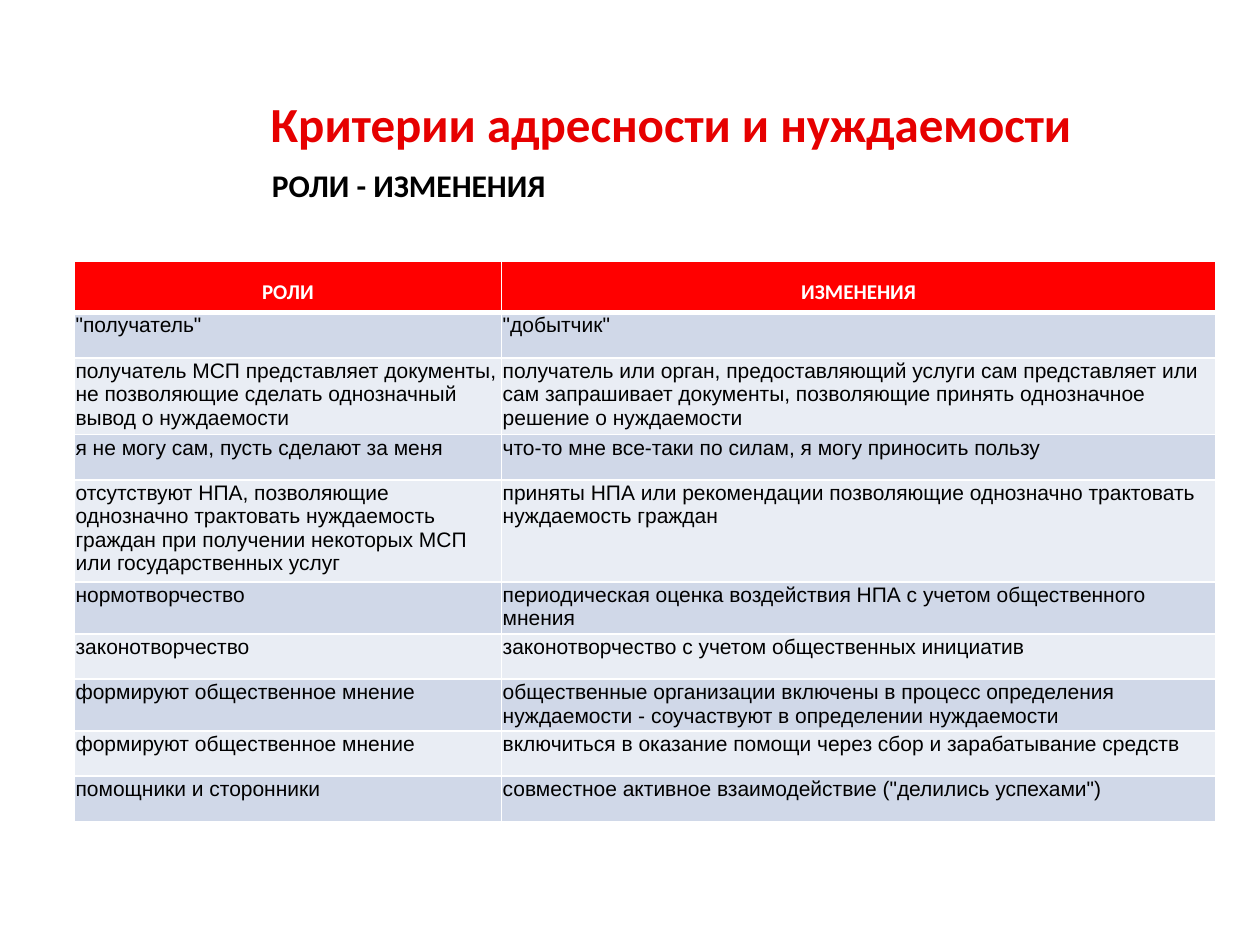
from lxml.etree import SubElement
from pptx import Presentation
from pptx.dml.color import RGBColor as RGB
from pptx.enum.text import MSO_ANCHOR as Anchor, PP_ALIGN as Align
from pptx.oxml.ns import qn
from pptx.util import Inches, Pt

# Content
TITLE = "Критерии адресности и нуждаемости"
SUBTITLE = "РОЛИ - ИЗМЕНЕНИЯ"
HEADER = ("РОЛИ", "ИЗМЕНЕНИЯ")
# Each entry: text lines the row needs, role, change
CHANGES = [
    (1, '"получатель"', '"добытчик"'),
    (3, "получатель МСП представляет документы, не позволяющие сделать однозначный вывод о нуждаемости",
     "получатель или орган, предоставляющий услуги сам представляет или сам запрашивает документы, "
     "позволяющие принять однозначное решение о нуждаемости"),
    (1, "я не могу сам, пусть сделают за меня", "что-то мне все-таки по силам, я могу приносить пользу"),
    (4, "отсутствуют НПА, позволяющие однозначно трактовать нуждаемость граждан при получении "
     "некоторых МСП или государственных услуг",
     "приняты НПА или рекомендации позволяющие однозначно трактовать нуждаемость граждан"),
    (2, "нормотворчество", "периодическая оценка воздействия НПА с учетом общественного мнения"),
    (1, "законотворчество", "законотворчество с учетом общественных инициатив"),
    (2, "формируют общественное мнение",
     "общественные организации включены в процесс определения нуждаемости - "
     "соучаствуют в определении нуждаемости"),
    (1, "формируют общественное мнение", "включиться в оказание помощи через сбор и зарабатывание средств"),
    (1, "помощники и сторонники", 'совместное активное взаимодействие ("делились успехами")'),
]

THEME = {
    "heading_font": "Calibri", "body_font": "Arial",
    "title_size": 28, "subtitle_size": 18, "table_size": 12,
    "title": "E60000", "text": "000000", "header_text": "FFFFFF",
    "header_fill": "FF0000", "bands": ("D0D8E8", "E9EDF4"), "border": "FFFFFF",
}

# Layout, in inches
SLIDE_W, SLIDE_H = 10, 7.5
TABLE_LEFT, TABLE_TOP = 0.59, 2.07
COLUMNS = (3.39, 5.67)
HEADER_H = 0.41
ROW_H = {1: 0.36, 2: 0.41, 3: 0.61, 4: 0.81}  # by number of text lines


def add_run(paragraph, text, size, color, font, bold):
    run = paragraph.add_run()
    run.text = text
    run.font.size = Pt(size)
    run.font.name = font
    run.font.bold = bold
    run.font.color.rgb = RGB.from_string(color)


def add_heading(slide, box, text, size, color, anchor, wrap):
    frame = slide.shapes.add_textbox(*map(Inches, box)).text_frame
    frame.word_wrap = wrap
    frame.vertical_anchor = anchor
    add_run(frame.paragraphs[0], text, size, color, THEME["heading_font"], True)


def set_borders(cell, top, bottom):
    tc_pr = cell._tc.get_or_add_tcPr()
    for side, width in (("L", 1), ("R", 1), ("T", top), ("B", bottom)):
        line = SubElement(tc_pr, qn(f"a:ln{side}"), w=str(Pt(width)))
        fill = SubElement(line, qn("a:solidFill"))
        SubElement(fill, qn("a:srgbClr"), val=THEME["border"])


def fill_cell(cell, text, row):
    is_header = row == 0
    set_borders(cell, top=3 if row == 1 else 1, bottom=3 if is_header else 1)
    cell.fill.solid()
    fill = THEME["header_fill"] if is_header else THEME["bands"][(row - 1) % 2]
    cell.fill.fore_color.rgb = RGB.from_string(fill)
    paragraph = cell.text_frame.paragraphs[0]
    if is_header:
        paragraph.alignment = Align.CENTER
        paragraph.line_spacing = 1.5
        add_run(paragraph, text, THEME["table_size"], THEME["header_text"], THEME["heading_font"], True)
    else:
        cell.margin_left = cell.margin_right = cell.margin_top = Inches(0.01)
        cell.margin_bottom = 0
        add_run(paragraph, text, THEME["table_size"], THEME["text"], THEME["body_font"], False)


def add_changes_table(slide):
    heights = [HEADER_H] + [ROW_H[lines] for lines, *_ in CHANGES]
    texts = [HEADER] + [pair for _, *pair in CHANGES]
    box = (TABLE_LEFT, TABLE_TOP, sum(COLUMNS), sum(heights))
    table = slide.shapes.add_table(len(texts), len(COLUMNS), *map(Inches, box)).table
    for column, width in zip(table.columns, COLUMNS):
        column.width = Inches(width)
    for row, (height, pair) in enumerate(zip(heights, texts)):
        table.rows[row].height = Inches(height)
        for col, text in enumerate(pair):
            fill_cell(table.cell(row, col), text, row)


def main():
    deck = Presentation()
    deck.slide_width, deck.slide_height = Inches(SLIDE_W), Inches(SLIDE_H)
    slide = deck.slides.add_slide(deck.slide_layouts[6])
    # Headings
    add_heading(slide, (2.06, 1.27, 2.4, 0.4), SUBTITLE, THEME["subtitle_size"], THEME["text"],
                Anchor.TOP, wrap=False)
    add_heading(slide, (2.05, 0.78, 7.15, 0.39), TITLE, THEME["title_size"], THEME["title"],
                Anchor.MIDDLE, wrap=True)
    # Roles and changes
    add_changes_table(slide)
    deck.save("out.pptx")


if __name__ == "__main__":
    main()
